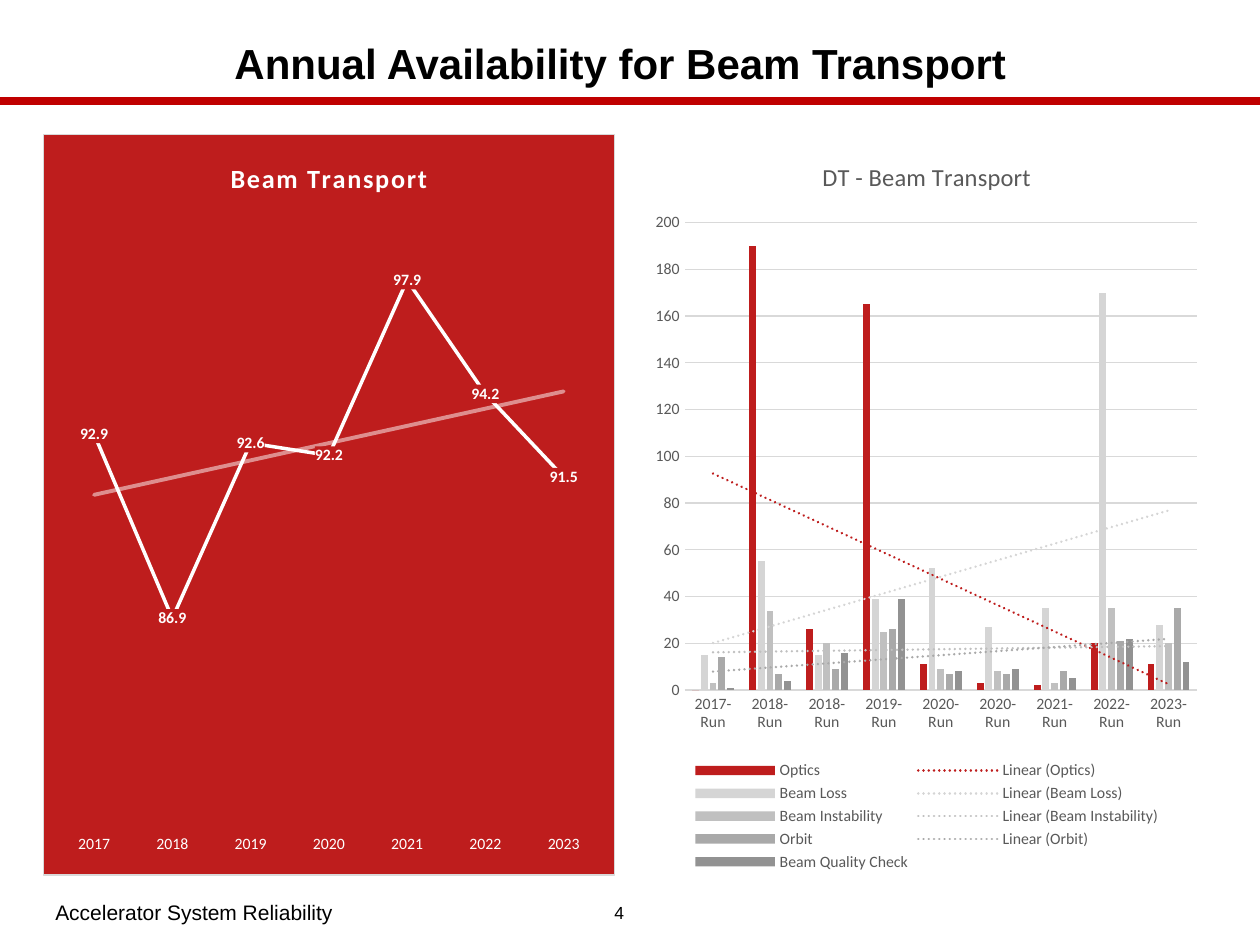
from dataclasses import dataclass

from lxml.etree import SubElement
from pptx import Presentation
from pptx.chart.data import CategoryChartData
from pptx.dml.color import RGBColor
from pptx.enum.chart import (XL_CHART_TYPE, XL_LABEL_POSITION, XL_LEGEND_POSITION,
                             XL_MARKER_STYLE, XL_TICK_MARK)
from pptx.enum.shapes import MSO_CONNECTOR
from pptx.enum.text import MSO_ANCHOR, PP_ALIGN
from pptx.oxml import parse_xml
from pptx.oxml.ns import nsdecls, qn
from pptx.util import Inches, Pt


@dataclass(frozen=True)
class Theme:
    text_font: str = "Arial"
    chart_font: str = "Calibri"
    black: str = "000000"
    white: str = "FFFFFF"
    rule: str = "C00000"
    red: str = "BE1D1D"
    grid: str = "D9D9D9"
    grey: str = "595959"
    title: int = 24
    footer: int = 12
    number: int = 10
    chart_title: int = 15
    bar_title: int = 14
    chart_text: int = 9


THEME = Theme()
YEARS = ["2017", "2018", "2019", "2020", "2021", "2022", "2023"]
AVAILABILITY = [92.9, 86.9, 92.6, 92.2, 97.9, 94.2, 91.5]
RUNS = [f"{year}-Run" for year in (2017, 2018, 2018, 2019, 2020, 2020, 2021, 2022, 2023)]
# Name, colour, whether it has a trend line, values
DOWNTIME = [
    ("Optics", THEME.red, True, [0, 190, 26, 165, 11, 3, 2, 20, 11]),
    ("Beam Loss", "D5D5D5", True, [15, 55, 15, 39, 52, 27, 35, 170, 28]),
    ("Beam Instability", "C0C0C0", True, [3, 34, 20, 25, 9, 8, 3, 35, 20]),
    ("Orbit", "A9A9A9", True, [14, 7, 9, 26, 7, 7, 8, 21, 35]),
    ("Beam Quality Check", "929292", False, [1, 4, 16, 39, 8, 9, 5, 22, 12]),
]


def style_font(font, size, color, bold=False, name=THEME.chart_font):
    font.name, font.size, font.bold = name, Pt(size), bold
    font.color.rgb = RGBColor.from_string(color)


def add_text(page, box, text, size, align=PP_ALIGN.LEFT, bold=False):
    frame = page.shapes.add_textbox(*map(Inches, box)).text_frame
    frame.word_wrap = True
    frame.vertical_anchor = MSO_ANCHOR.MIDDLE
    frame.text = text
    para = frame.paragraphs[0]
    para.alignment = align
    style_font(para.runs[0].font, size, THEME.black, bold, THEME.text_font)
    return para


def solid_fill(color, border=""):
    return parse_xml(f'<c:spPr {nsdecls("c", "a")}><a:solidFill><a:srgbClr val="{color}"/>'
                     f'</a:solidFill>{border}</c:spPr>')


def set_layout(parent, position, x, y, width, height):
    """Give a plot area or legend a fixed place, as fractions of the chart."""
    for old in parent.findall(qn("c:layout")):
        parent.remove(old)
    inner = '<c:layoutTarget val="inner"/>' if parent.tag == qn("c:plotArea") else ""
    parent.insert(position, parse_xml(
        f'<c:layout {nsdecls("c")}><c:manualLayout>{inner}'
        '<c:xMode val="edge"/><c:yMode val="edge"/>'
        f'<c:x val="{x}"/><c:y val="{y}"/><c:w val="{width}"/><c:h val="{height}"/>'
        '</c:manualLayout></c:layout>'))


def add_trend(series, color, width, dash, alpha=100):
    trend = parse_xml(
        f'<c:trendline {nsdecls("c", "a")}><c:name>Linear ({series.name})</c:name>'
        f'<c:spPr><a:ln w="{Pt(width)}" cap="rnd"><a:solidFill><a:srgbClr val="{color}">'
        f'<a:alpha val="{alpha * 1000}"/></a:srgbClr></a:solidFill>'
        f'<a:prstDash val="{dash}"/></a:ln></c:spPr><c:trendlineType val="linear"/>'
        '<c:dispRSqr val="0"/><c:dispEq val="0"/></c:trendline>')
    series._element.find(qn("c:cat")).addprevious(trend)


def add_chart(page, box, kind, categories, rows):
    data = CategoryChartData()
    data.categories = categories
    for name, values in rows:
        data.add_series(name, values)
    chart = page.shapes.add_chart(kind, *map(Inches, box), data).chart
    style_font(chart.font, 10, THEME.black)
    chart.has_legend = False
    chart.plots[0].vary_by_categories = False
    chart.category_axis.major_tick_mark = XL_TICK_MARK.NONE
    return chart


def set_title(chart, text, size, color, bold=False, spacing=0):
    chart.has_title = True
    frame = chart.chart_title.text_frame
    frame.text = text
    span = frame.paragraphs[0].runs[0]
    style_font(span.font, size, color, bold)
    span._r.get_or_add_rPr().set("spc", str(spacing))
    chart.chart_title.include_in_layout = False


def header(page, box):
    left, top, width, height = box
    rule = page.shapes.add_connector(MSO_CONNECTOR.STRAIGHT, Inches(-0.01), Inches(0.8),
                                     Inches(10), Inches(0.8))
    rule.line.color.rgb = RGBColor.from_string(THEME.rule)
    rule.line.width = Pt(4.5)
    SubElement(rule._element.spPr, qn("a:effectLst"))
    title = add_text(page, box, "Annual Availability for Beam Transport ",
                     THEME.title, PP_ALIGN.CENTER, True)
    title.line_spacing = 0.9


def footer(page, box):
    left, top, width, height = box
    number_width = 0.59
    label_width = width - number_width
    add_text(page, (left, top, label_width, height), "Accelerator System Reliability",
             THEME.footer)
    add_text(page, (left + label_width, top, number_width, height), "4",
             THEME.number, PP_ALIGN.CENTER)


def availability_chart(page, box):
    chart = add_chart(page, box, XL_CHART_TYPE.LINE, YEARS,
                      [("Beam Transport", AVAILABILITY)])
    set_title(chart, "Beam Transport", THEME.chart_title, THEME.white, True, 100)
    # Red panel with a thin border
    border = (f'<a:ln w="{Pt(0.75)}"><a:solidFill><a:srgbClr val="{THEME.grid}"/>'
              '</a:solidFill></a:ln>')
    chart._chartSpace.find(qn("c:txPr")).addprevious(solid_fill(THEME.red, border))
    set_layout(chart._chartSpace.chart.plotArea, 0, 0.02, 0.11, 0.96, 0.83)
    # Axes
    style_font(chart.category_axis.tick_labels.font, THEME.chart_text, THEME.white)
    chart.category_axis.format.line.fill.background()
    axis = chart.value_axis
    axis.minimum_scale, axis.maximum_scale = 80, 100
    axis.has_major_gridlines = False
    axis.visible = False
    # Line, labels that mask it, and trend
    series = chart.plots[0].series[0]
    series.smooth = False
    series.marker.style = XL_MARKER_STYLE.NONE
    series.format.line.color.rgb = RGBColor.from_string(THEME.white)
    series.format.line.width = Pt(2)
    labels = series.data_labels
    labels.show_value = True
    labels.number_format, labels.number_format_is_linked = "0.0", False
    labels.position = XL_LABEL_POSITION.CENTER
    style_font(labels.font, THEME.chart_text, THEME.white, True)
    labels._element.find(qn("c:txPr")).addprevious(solid_fill(THEME.red))
    add_trend(series, THEME.white, 2.25, "solid", 50)


def downtime_chart(page, box):
    chart = add_chart(page, box, XL_CHART_TYPE.COLUMN_CLUSTERED, RUNS,
                      [(name, values) for name, _, _, values in DOWNTIME])
    set_title(chart, "DT - Beam Transport", THEME.bar_title, THEME.grey)
    set_layout(chart._chartSpace.chart.plotArea, 0, 0.07, 0.12, 0.91, 0.63)
    # Axes
    value_axis = chart.value_axis
    value_axis.minimum_scale, value_axis.maximum_scale = 0, 200
    value_axis.major_unit = 20
    value_axis.major_tick_mark = XL_TICK_MARK.NONE
    value_axis.format.line.fill.background()
    for axis in (chart.category_axis, value_axis):
        style_font(axis.tick_labels.font, THEME.chart_text, THEME.grey)
    for line in (chart.category_axis.format.line, value_axis.major_gridlines.format.line):
        line.color.rgb = RGBColor.from_string(THEME.grid)
        line.width = Pt(0.75)
    # Columns and trends
    plot = chart.plots[0]
    plot.gap_width, plot.overlap = 219, -27
    for series, (_, color, has_trend, _) in zip(plot.series, DOWNTIME):
        series.format.fill.solid()
        series.format.fill.fore_color.rgb = RGBColor.from_string(color)
        if has_trend:
            add_trend(series, color, 1.5, "sysDot")
    # Legend
    chart.has_legend = True
    chart.legend.position = XL_LEGEND_POSITION.BOTTOM
    chart.legend.include_in_layout = False
    style_font(chart.legend.font, THEME.chart_text, THEME.grey)
    set_layout(chart.legend._element, 1, 0.08, 0.84, 0.84, 0.16)


def main():
    deck = Presentation()
    deck.slide_width, deck.slide_height = Inches(10), Inches(7.5)
    page = deck.slides.add_slide(deck.slide_layouts[6])
    header(page, (0.34, 0.26, 9.26, 0.53))
    footer(page, (0.34, 7.07, 4.87, 0.34))
    availability_chart(page, (0.34, 1.06, 4.54, 5.89))
    downtime_chart(page, (5.12, 1.06, 4.47, 5.89))
    deck.save("out.pptx")


if __name__ == "__main__":
    main()
